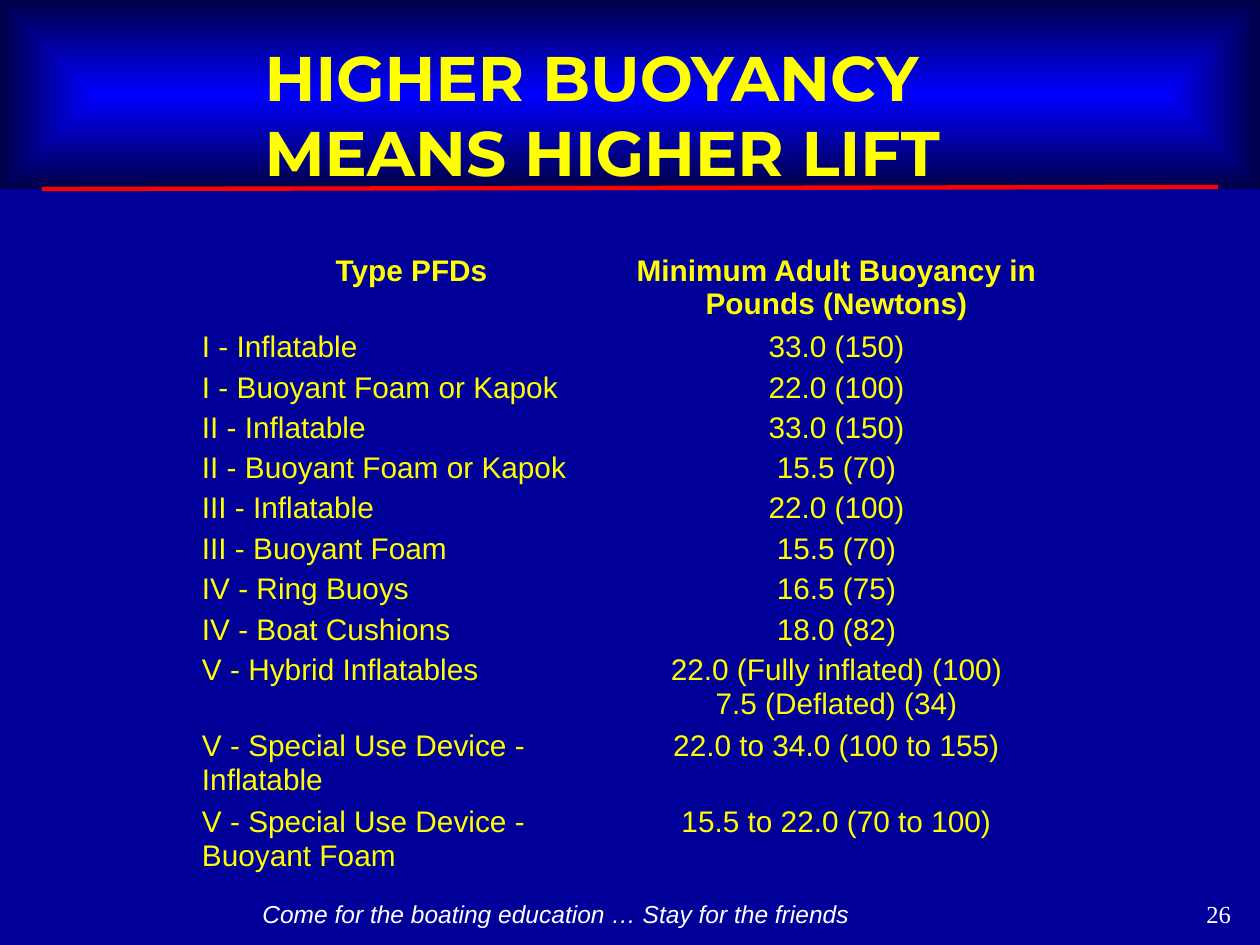
from lxml.etree import SubElement
from pptx import Presentation
from pptx.dml.color import RGBColor
from pptx.enum.shapes import MSO_CONNECTOR, MSO_SHAPE
from pptx.enum.text import MSO_ANCHOR, PP_ALIGN
from pptx.oxml import parse_xml
from pptx.oxml.ns import nsdecls, qn
from pptx.util import Pt

SCALE = 914400 / 126
COLORS = {"background": "000099", "glow": "0000FF", "edge": "000046",
          "rule": "FF0000", "yellow": "FFFF00", "white": "FFFFFF"}


def px(*lengths):
    return [round(length * SCALE) for length in lengths]


def add_text(frame, text, font, size, color, align, bold=False, italic=False):
    frame.word_wrap = True
    para = frame.paragraphs[0]
    para.alignment = align
    for number, line in enumerate(text.split("\n")):
        if number:
            para.add_line_break()
        span = para.add_run()
        span.text = line
        span.font.name = font
        span.font.size = Pt(size)
        span.font.bold = bold
        span.font.italic = italic
        span.font.color.rgb = RGBColor.from_string(COLORS[color])


deck = Presentation()
deck.slide_width, deck.slide_height = px(1260, 945)
slide = deck.slides.add_slide(deck.slide_layouts[5])
slide.background.fill.solid()
slide.background.fill.fore_color.rgb = RGBColor.from_string(COLORS["background"])

# Header band, glowing from its centre
band = slide.shapes.add_shape(MSO_SHAPE.RECTANGLE, *px(0, 0, 1260, 189))
band.shadow.inherit = False
band.line.fill.background()
band.fill.background()
properties = band._element.spPr
properties.replace(properties.find(qn("a:noFill")), parse_xml(
    f'<a:gradFill {nsdecls("a")} rotWithShape="1"><a:gsLst>'
    f'<a:gs pos="0"><a:srgbClr val="{COLORS["glow"]}"/></a:gs>'
    f'<a:gs pos="100000"><a:srgbClr val="{COLORS["edge"]}"/></a:gs></a:gsLst>'
    '<a:path path="rect"><a:fillToRect l="50000" t="50000" r="50000" b="50000"/>'
    '</a:path></a:gradFill>'))

# Red rule under the band
rule = slide.shapes.add_connector(MSO_CONNECTOR.STRAIGHT, *px(42, 189, 1218, 187))
rule.line.color.rgb = RGBColor.from_string(COLORS["rule"])
rule.line.width = Pt(2.5)
SubElement(rule._element.spPr, qn("a:effectLst"))

# Buoyancy table
rows = [
    ("Type PFDs", "Minimum Adult Buoyancy in Pounds (Newtons)"),
    ("I - Inflatable", "33.0 (150)"),
    ("I - Buoyant Foam or Kapok", "22.0 (100)"),
    ("II - Inflatable", "33.0 (150)"),
    ("II - Buoyant Foam or Kapok", "15.5 (70)"),
    ("III - Inflatable", "22.0 (100)"),
    ("III - Buoyant Foam", "15.5 (70)"),
    ("IV - Ring Buoys", "16.5 (75)"),
    ("IV - Boat Cushions", "18.0 (82)"),
    ("V - Hybrid Inflatables", "22.0 (Fully inflated) (100)\n7.5 (Deflated) (34)"),
    ("V - Special Use Device - Inflatable", "22.0 to 34.0 (100 to 155)"),
    ("V - Special Use Device - Buoyant Foam", "15.5 to 22.0 (70 to 100)"),
]
heights = px(76, *[41, 40] * 4, 76, 76, 76)
table = slide.shapes.add_table(len(rows), 2, *px(199, 251, 850, 628)).table
table.first_row = table.horz_banding = False
for column in table.columns:
    column.width = px(425)[0]
for row_number, (values, height) in enumerate(zip(rows, heights)):
    table.rows[row_number].height = height
    for column_number, value in enumerate(values):
        cell = table.cell(row_number, column_number)
        cell.margin_left, cell.margin_top, cell.margin_right, cell.margin_bottom = px(3, 3, 3, 3)
        is_header = row_number == 0
        centered = is_header or column_number == 1
        add_text(cell.text_frame, value, "Arial", 17, "yellow",
                 PP_ALIGN.CENTER if centered else PP_ALIGN.LEFT, bold=is_header)
        # Clear borders come before the fill
        cell_properties = cell._tc.get_or_add_tcPr()
        for side in ("lnL", "lnR", "lnT", "lnB"):
            border = SubElement(cell_properties, qn(f"a:{side}"))
            SubElement(border, qn("a:noFill"))
        cell.fill.background()

# Title, brought in front of the band
title = slide.shapes.title
slide.shapes._spTree.append(title._element)
title.left, title.top, title.width, title.height = px(252, 32, 924, 165)
title.text_frame.vertical_anchor = MSO_ANCHOR.TOP
add_text(title.text_frame, "HIGHER BUOYANCY MEANS HIGHER LIFT", "Montserrat", 36,
         "yellow", PP_ALIGN.LEFT, bold=True)

# Slide number and motto
number_box = slide.shapes.add_textbox(*px(987, 882, 262, 63))
number_box.text_frame.vertical_anchor = MSO_ANCHOR.MIDDLE
number_box.text_frame.margin_right = px(18)[0]
add_text(number_box.text_frame, "26", "Times New Roman", 14, "white", PP_ALIGN.RIGHT)
motto_box = slide.shapes.add_textbox(*px(220, 893, 672, 52))
add_text(motto_box.text_frame, "Come for the boating education … Stay for the friends",
         "Arial", 14, "white", PP_ALIGN.CENTER, italic=True)

deck.save("out.pptx")
